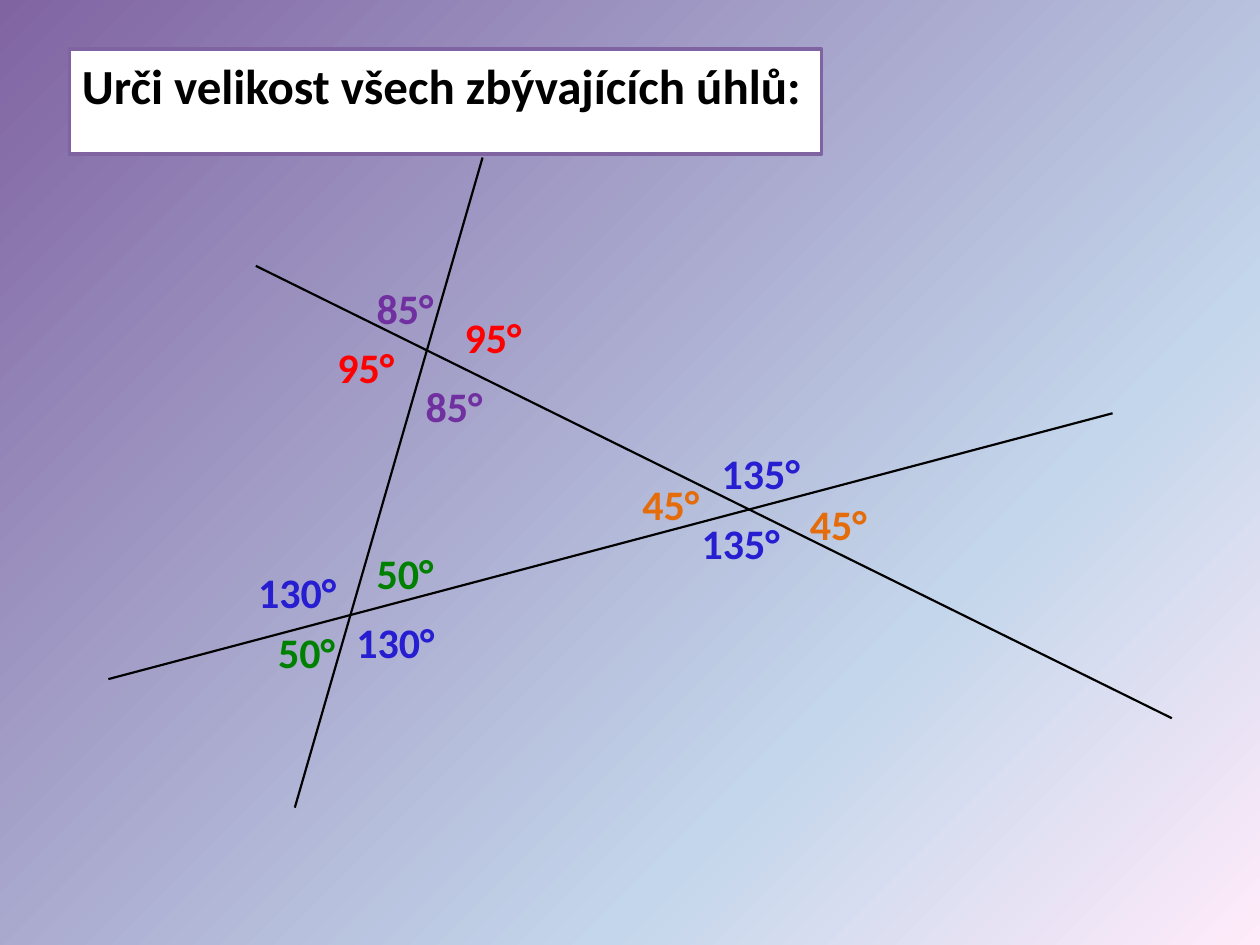
from copy import deepcopy

from lxml import etree
from pptx import Presentation
from pptx import util as u
from pptx.dml.color import RGBColor
from pptx.enum import shapes, text
from pptx.oxml import ns

SCALE = 9144  # EMU per px, 100 px to the inch
FONT = "Calibri"


def px(*vals):
    return [u.Emu(v * SCALE) for v in vals]


def rgb(code):
    return RGBColor.from_string(code)


def assign(item, vals):
    for key, val in vals.items():
        setattr(item, key, val)


class Board:
    """Holds the style and the current slide."""

    frame = {"word_wrap": False, "auto_size": text.MSO_AUTO_SIZE.SHAPE_TO_FIT_TEXT,
             "vertical_anchor": text.MSO_ANCHOR.TOP}
    font = {"name": FONT, "bold": True}

    def __init__(self, deck):
        self.slide = deck.slides.add_slide(deck.slide_layouts[5])

    def backdrop(self, stops):
        """Fill the background from top left to bottom right."""
        fill = self.slide.background.fill
        fill.gradient()
        fill.gradient_angle = 315
        first = fill.gradient_stops[0]._gs
        for _ in stops[2:]:
            first.addnext(deepcopy(first))
        for stop, (pos, code) in zip(fill.gradient_stops, stops):
            stop.position = pos
            stop.color.rgb = rgb(code)

    def label(self, shape, words, size, code):
        frame = shape.text_frame
        assign(frame, self.frame)
        para = frame.paragraphs[0]
        para.alignment = text.PP_ALIGN.LEFT
        run = para.add_run()
        run.text = words
        assign(run.font, {**self.font, "size": u.Pt(size)})
        run.font.color.rgb = rgb(code)

    def title(self, words, box, edge):
        shape = self.slide.shapes.title
        assign(shape, dict(zip(("left", "top", "width", "height"), px(*box))))
        shape.fill.solid()
        shape.fill.fore_color.rgb = rgb("FFFFFF")
        shape.line.color.rgb = rgb(edge)
        shape.line.width = u.Pt(2)
        self.label(shape, words, 28, "000000")

    def line(self, *ends):
        link = self.slide.shapes.add_connector(shapes.MSO_CONNECTOR.STRAIGHT, *px(*ends))
        link.line.color.rgb = rgb("000000")
        link.line.width = u.Pt(1.25)
        etree.SubElement(link._element.spPr, ns.qn("a:effectLst"))

    def angle(self, deg, left, top, code):
        wide = 83 if deg > 99 else 66
        box = self.slide.shapes.add_textbox(*px(left, top, wide, 50))
        self.label(box, f"{deg}°", 24, code)


LINES = [(383, 125, 234, 641), (203, 211, 930, 570), (86, 539, 883, 328)]

# Each pair of vertical angles: size, colour, both places
ANGLES = [
    (45, "E46C0A", [(633, 391), (500, 375)]),
    (50, "008000", [(289, 430), (211, 492)]),
    (95, "FF0000", [(359, 242), (258, 266)]),
    (85, "7030A0", [(328, 297), (289, 219)]),
    (135, "261ED0", [(563, 350), (547, 406)]),
    (130, "261ED0", [(273, 484), (195, 445)]),
]


def main():
    deck = Presentation()
    deck.slide_width, deck.slide_height = px(1000, 750)
    board = Board(deck)
    board.backdrop([(0, "8064A2"), (0.7, "C4D6EB"), (1, "FFEBFA")])
    board.title("Urči velikost všech zbývajících úhlů:", (55, 39, 597, 57), "8064A2")
    for ends in LINES:
        board.line(*ends)
    for deg, code, spots in ANGLES:
        for left, top in spots:
            board.angle(deg, left, top, code)
    deck.save("out.pptx")


if __name__ == "__main__":
    main()
